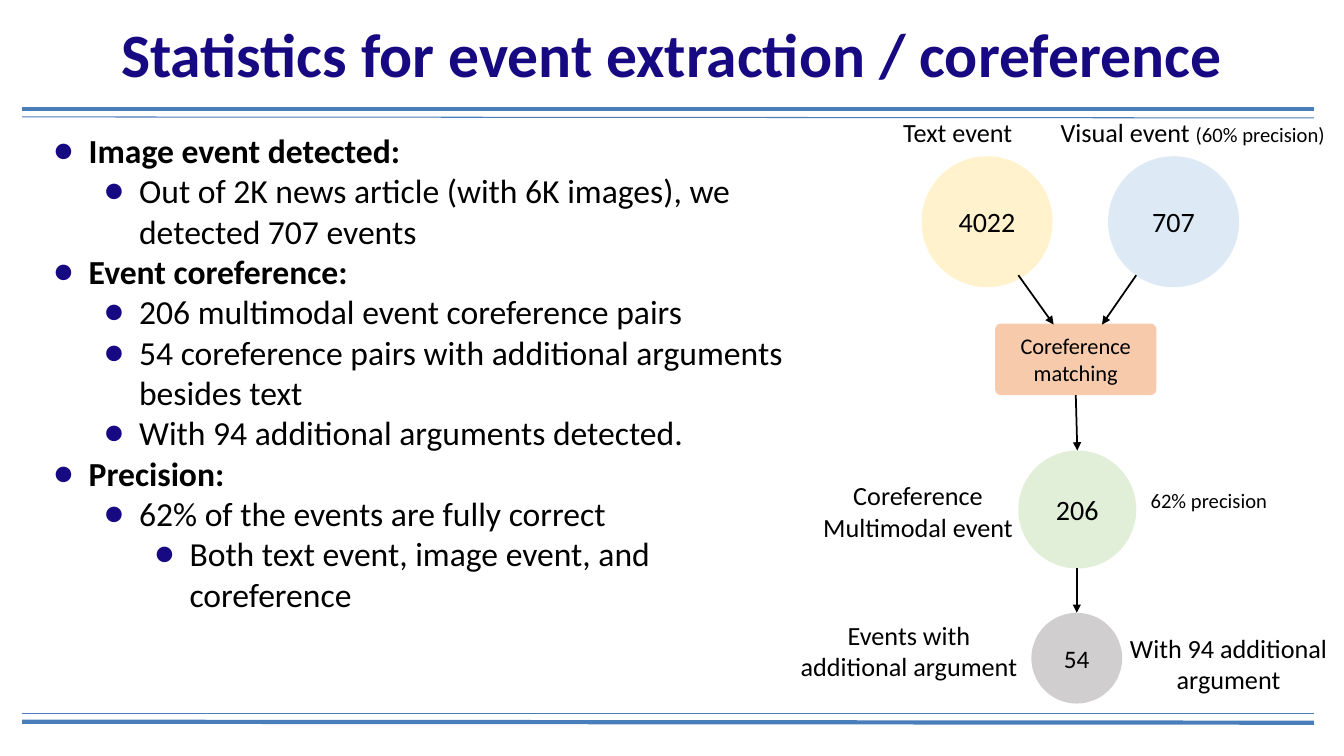
from pptx import Presentation
from pptx.dml.color import RGBColor
from pptx.enum.shapes import MSO_CONNECTOR as CONN, MSO_SHAPE as SHAPE
from pptx.enum.text import MSO_ANCHOR as ANCHOR, PP_ALIGN as ALIGN
from pptx.oxml.ns import qn
from pptx.util import Pt
from lxml.etree import SubElement

PX = 9144  # EMU per px, 100 px to the inch
FONT = "Calibri"
C = {"navy": "170981", "rule": "4A7EBB", "black": "000000", "yellow": "FFF2CC",
     "blue": "DDEAF6", "green": "E1EFD8", "orange": "F7CAAC", "gray": "D0CECE"}

prs = Presentation()
prs.slide_width, prs.slide_height = 1333 * PX, 750 * PX
s = prs.slides.add_slide(prs.slide_layouts[6])


def set_text(sp, runs, align, anchor=ANCHOR.TOP, color="black", bold=False, inset=10):
    tf = sp.text_frame
    tf.word_wrap = True
    tf.vertical_anchor = anchor
    tf.margin_left = tf.margin_right = inset * PX
    tf.margin_top = tf.margin_bottom = 5 * PX
    p = tf.paragraphs[0]
    p.alignment = align
    for text, size in runs:
        r = p.add_run()
        r.text = text
        r.font.name, r.font.size, r.font.bold = FONT, Pt(size), bold
        r.font.color.rgb = RGBColor.from_string(C[color])


def add_line(x1, y1, x2, y2, color, width, arrow=False):
    line = s.shapes.add_connector(CONN.STRAIGHT, x1 * PX, y1 * PX, x2 * PX, y2 * PX)
    line.line.color.rgb = RGBColor.from_string(C[color])
    line.line.width = Pt(width)
    if arrow:
        SubElement(line.line._get_or_add_ln(), qn("a:tailEnd"), type="triangle")
    SubElement(line._element.spPr, qn("a:effectLst"))
    return line


# Double rules under the title and at the foot
for y1, y2, width in [(108, 108, 3), (116, 117, 0.75), (716, 717, 3), (708, 708, 0.75)]:
    add_line(22, y1, 1303, y2, "rule", width)

# Title
title = s.shapes.add_textbox(0, 13 * PX, 1333 * PX, 79 * PX)
set_text(title, [("Statistics for event extraction / coreference", 44)], ALIGN.CENTER,
         ANCHOR.MIDDLE, "navy", True, 5)

# Bulleted list
bullets = [
    (0, "Image event detected:"),
    (1, "Out of 2K news article (with 6K images), we detected 707 events"),
    (0, "Event coreference:"),
    (1, "206 multimodal event coreference pairs"),
    (1, "54 coreference pairs with additional arguments besides text"),
    (1, "With 94 additional arguments detected."),
    (0, "Precision:"),
    (1, "62% of the events are fully correct"),
    (2, "Both text event, image event, and coreference"),
]
body = s.shapes.add_textbox(33 * PX, 124 * PX, 755 * PX, 593 * PX)
tf = body.text_frame
tf.word_wrap = True
tf.margin_left = tf.margin_right = tf.margin_top = tf.margin_bottom = 5 * PX
for i, (level, text) in enumerate(bullets):
    p = tf.add_paragraph() if i else tf.paragraphs[0]
    p.level = level
    pPr = p._p.get_or_add_pPr()
    pPr.set("marL", str(50 * (level + 1) * PX))
    pPr.set("indent", str(-35 * PX))
    SubElement(SubElement(pPr, qn("a:buClr")), qn("a:srgbClr"), val=C["navy"])
    SubElement(pPr, qn("a:buFont"), typeface=FONT)
    SubElement(pPr, qn("a:buChar"), char="●")
    r = p.add_run()
    r.text = text
    r.font.name, r.font.size, r.font.bold = FONT, Pt(24), level == 0
    r.font.color.rgb = RGBColor.from_string(C["black"])

# Flow nodes
nodes = {}
for text, shape, x, y, w, h, fill, size in [
    ("707", SHAPE.OVAL, 1099, 155, 130, 130, "blue", 20),
    ("4022", SHAPE.OVAL, 914, 155, 130, 130, "yellow", 20),
    ("206", SHAPE.OVAL, 1010, 447, 117, 117, "green", 20),
    ("Coreference matching", SHAPE.ROUNDED_RECTANGLE, 987, 321, 160, 71, "orange", 16),
    ("54", SHAPE.OVAL, 1023, 608, 90, 90, "gray", 18),
]:
    sp = s.shapes.add_shape(shape, x * PX, y * PX, w * PX, h * PX)
    sp.shadow.inherit = False
    sp.fill.solid()
    sp.fill.fore_color.rgb = RGBColor.from_string(C[fill])
    sp.line.fill.background()
    set_text(sp, [(text, size)], ALIGN.CENTER, ANCHOR.MIDDLE)
    nodes[text] = sp
matching = nodes["Coreference matching"]
matching.adjustments[0] = 0.08

# Arrows
add_line(1010, 273, 1045, 322, "black", 1.25, True)
add_line(1127, 273, 1093, 322, "black", 1.25, True)
to_pairs = add_line(1068, 392, 1068, 447, "black", 1.25, True)
to_pairs.begin_connect(matching, 2)
to_pairs.end_connect(nodes["206"], 0)
to_additional = add_line(1068, 564, 1068, 608, "black", 1.25, True)
to_additional.end_connect(nodes["54"], 0)

# Labels beside the nodes
for x, y, w, h, align, runs in [
    (886, 111, 152, 40, ALIGN.LEFT, [("Text event", 18.7)]),
    (1042, 111, 295, 40, ALIGN.LEFT, [("Visual event ", 18.7), ("(60% precision)", 14.7)]),
    (800, 471, 221, 40, ALIGN.CENTER, [("Coreference Multimodal event", 18.7)]),
    (1102, 479, 194, 34, ALIGN.CENTER, [("62% precision", 14.7)]),
    (776, 609, 251, 40, ALIGN.CENTER, [("Events with additional argument", 18.7)]),
    (1093, 622, 251, 40, ALIGN.CENTER, [("With 94 additional argument", 18.7)]),
]:
    label = s.shapes.add_textbox(x * PX, y * PX, w * PX, h * PX)
    set_text(label, runs, align)

prs.save("out.pptx")
